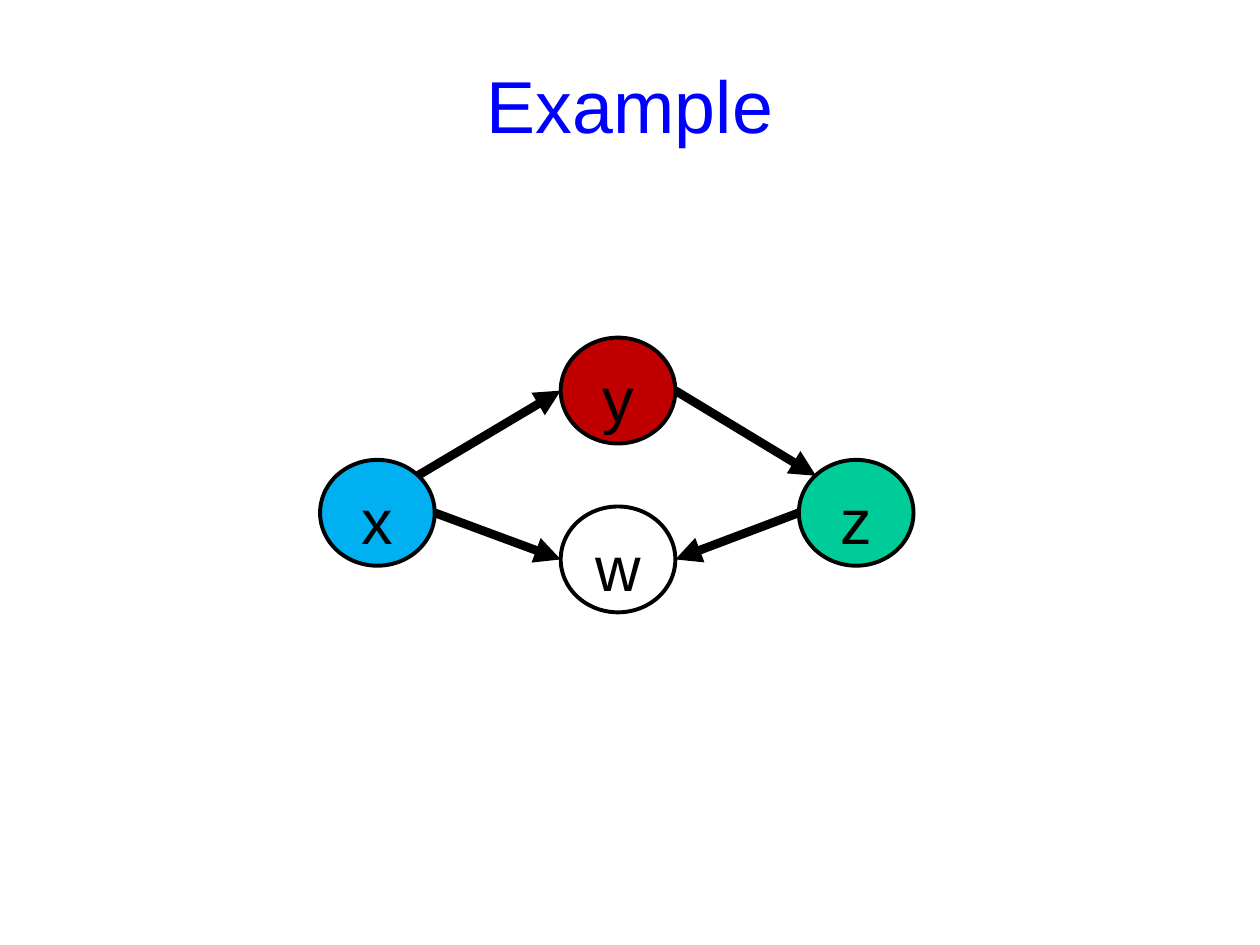
from lxml.etree import SubElement
from pptx import Presentation
from pptx.dml.color import RGBColor
from pptx.enum.shapes import MSO_CONNECTOR, MSO_SHAPE
from pptx.enum.text import MSO_ANCHOR, PP_ALIGN
from pptx.oxml.ns import qn
from pptx.util import Inches, Pt

COLORS = {
    "title": "0000FF",
    "ink": "000000",
    "x": "00B0F0",
    "y": "C00000",
    "z": "00CC99",
}
NODE_WIDTH, NODE_HEIGHT = 0.91, 0.84
NODES = {"x": (2.54, 3.65), "y": (4.45, 2.68), "z": (6.34, 3.65), "w": (4.45, 4.02)}
ANCHORS = {"left": (0, 0.5), "right": (1, 0.5), "top left": (0.15, 0.15), "top right": (0.85, 0.15)}
EDGES = [
    ("x", "top right", "y", "left"),
    ("y", "right", "z", "top left"),
    ("x", "right", "w", "left"),
    ("z", "left", "w", "right"),
]


def color(name):
    return RGBColor.from_string(COLORS[name])


def write(frame, text, size, color_name):
    paragraph = frame.paragraphs[0]
    paragraph.text = text
    paragraph.alignment = PP_ALIGN.CENTER
    paragraph.font.name = "Arial"
    paragraph.font.size = Pt(size)
    paragraph.font.color.rgb = color(color_name)
    return paragraph


def add_title(slide, text):
    title = slide.shapes.add_textbox(Inches(0.75), Inches(0.2), Inches(8.5), Inches(1.25))
    title.text_frame.word_wrap = True
    title.text_frame.vertical_anchor = MSO_ANCHOR.MIDDLE
    write(title.text_frame, text, 42, "title")


def add_node(graph, label):
    left, top = NODES[label]
    node = graph.shapes.add_shape(
        MSO_SHAPE.OVAL, Inches(left), Inches(top), Inches(NODE_WIDTH), Inches(NODE_HEIGHT)
    )
    node.shadow.inherit = False
    if label in COLORS:
        node.fill.solid()
        node.fill.fore_color.rgb = color(label)
    else:
        node.fill.background()
    node.line.color.rgb = color("ink")
    node.line.width = Pt(2.25)
    node.text_frame.word_wrap = False
    node.text_frame.vertical_anchor = MSO_ANCHOR.TOP
    write(node.text_frame, label, 36, "ink").space_before = Pt(7.2)


def anchor_point(label, anchor):
    left, top = NODES[label]
    across, down = ANCHORS[anchor]
    return Inches(left + across * NODE_WIDTH), Inches(top + down * NODE_HEIGHT)


def add_edge(graph, source, source_anchor, target, target_anchor):
    edge = graph.shapes.add_connector(
        MSO_CONNECTOR.STRAIGHT,
        *anchor_point(target, target_anchor),
        *anchor_point(source, source_anchor),
    )
    edge.line.color.rgb = color("ink")
    edge.line.width = Pt(5)
    SubElement(edge.line._get_or_add_ln(), qn("a:headEnd"), type="triangle")
    SubElement(edge._element.spPr, qn("a:effectLst"))


def main():
    presentation = Presentation()
    presentation.slide_width = Inches(10)
    presentation.slide_height = Inches(7.5)
    slide = presentation.slides.add_slide(presentation.slide_layouts[6])
    add_title(slide, "Example")
    graph = slide.shapes.add_group_shape()
    for label in NODES:
        add_node(graph, label)
    for edge in EDGES:
        add_edge(graph, *edge)
    presentation.save("out.pptx")


if __name__ == "__main__":
    main()
